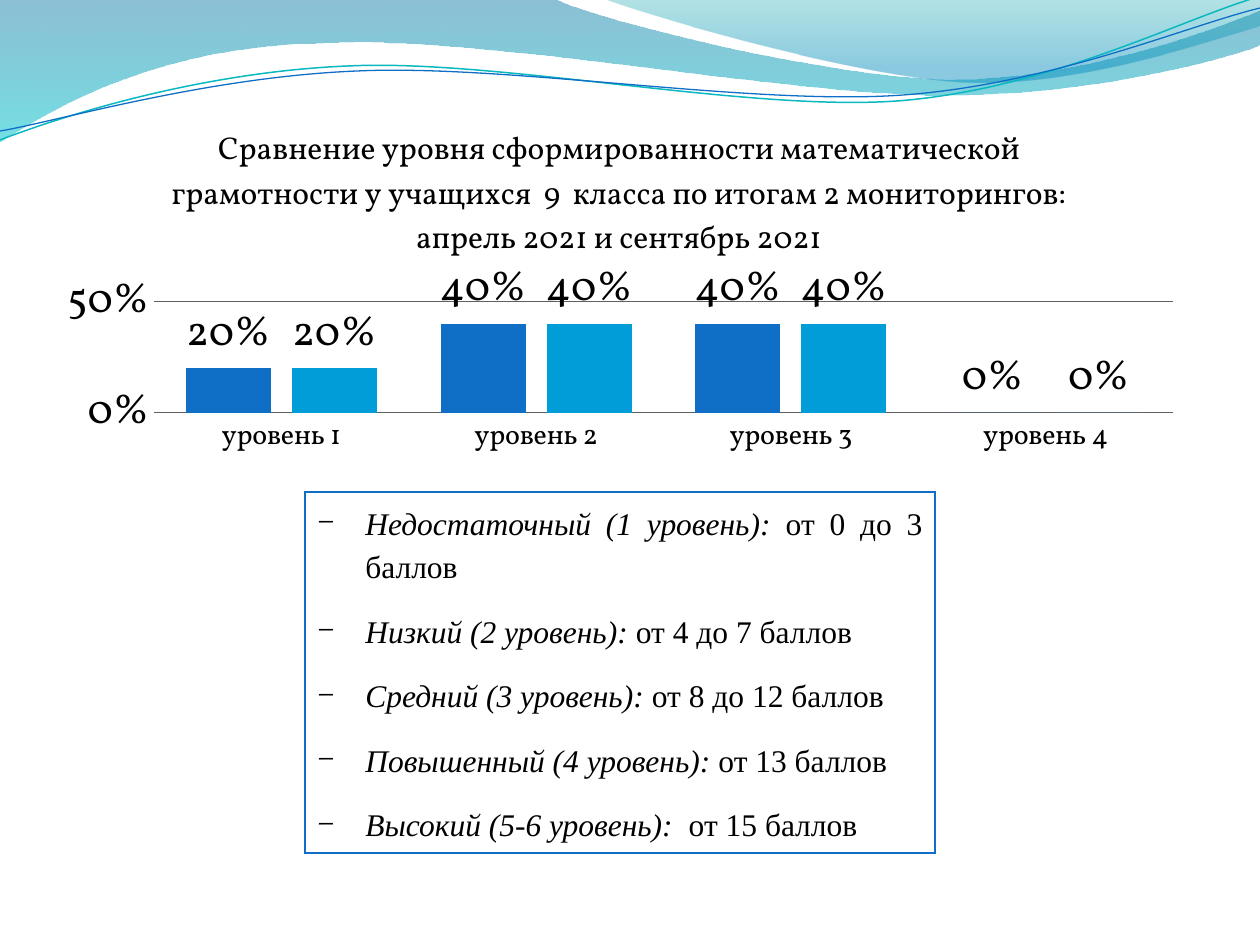
"""Build a slide comparing mathematical literacy levels across two assessments."""
from math import cos, radians, sin

from lxml import etree
from pptx import Presentation
from pptx.chart.data import CategoryChartData
from pptx.dml.color import RGBColor
from pptx.enum.chart import XL_CHART_TYPE, XL_LABEL_POSITION, XL_TICK_MARK
from pptx.enum.shapes import MSO_SHAPE
from pptx.enum.text import MSO_ANCHOR, MSO_AUTO_SIZE, PP_ALIGN
from pptx.oxml import parse_xml
from pptx.oxml.ns import nsdecls, qn
from pptx.util import Emu, Pt

COLUMNS = XL_CHART_TYPE.COLUMN_CLUSTERED
OUTSIDE_END = XL_LABEL_POSITION.OUTSIDE_END
NO_TICK = XL_TICK_MARK.NONE
RECTANGLE = MSO_SHAPE.RECTANGLE
TOP = MSO_ANCHOR.TOP
GROW = MSO_AUTO_SIZE.SHAPE_TO_FIT_TEXT
JUSTIFY = PP_ALIGN.JUSTIFY

BLACK = RGBColor(0x00, 0x00, 0x00)
GRAY = RGBColor(0x60, 0x60, 0x60)
BLUE = RGBColor(0x0F, 0x6F, 0xC6)
SKY = RGBColor(0x00, 0x9D, 0xD9)
TEAL = RGBColor(0x0A, 0xB8, 0xBF)
DEEP_BLUE = RGBColor(0x00, 0x74, 0xA1)
TURQUOISE = RGBColor(0x00, 0xC6, 0xCF)
SEA = RGBColor(0x00, 0xA1, 0xA9)
AZURE = RGBColor(0x00, 0x8B, 0xBF)

PX = 9144000 / 1260
CHART_BOX = (44, 106, 1150, 357)
PLOT_BOX = (154, 302, 1019, 111)
LEGEND_BOX = (305, 492, 630, 361)
HANGING = 48
WAVE_TILT = -2.7
WAVE_CENTER = (629, 73)

TITLE = ("Сравнение уровня сформированности математической грамотности "
         "у учащихся  9  класса по итогам 2 мониторингов: "
         "апрель 2021 и сентябрь 2021")
CATEGORIES = ["уровень 1", "уровень 2", "уровень 3", "уровень 4"]
SERIES = [("Series 1", (0.2, 0.4, 0.4, 0), BLUE),
          ("Series 2", (0.2, 0.4, 0.4, 0), SKY)]
LEVELS = [("Недостаточный (1 уровень):", " от 0 до 3 баллов"),
          ("Низкий (2 уровень):", " от 4 до 7 баллов"),
          ("Средний (3 уровень):", " от 8 до 12 баллов"),
          ("Повышенный (4 уровень):", " от 13 баллов"),
          ("Высокий (5-6 уровень):  ", "от 15 баллов")]
BANDS = [
    ([(0, 0), (554, -1), (600, 21, 837, 79, 955, 79),
      (1074, 79, 1207, 33, 1260, 11), (1261, 45),
      (1239, 55, 1096, 96, 940, 95), (784, 95, 481, 35, 324, 43),
      (163, 45, 58, 105, -1, 142), (0, 0)],
     [(0, DEEP_BLUE, 45), (1, TURQUOISE, 55)]),
    ([(604, -1), (641, 14, 859, 78, 969, 82),
      (1079, 86, 1211, 40, 1260, 26), (1260, 0), (604, -1)],
     [(0, SEA, 30), (0.8, AZURE, 45)]),
]
WAVES = [
    ([(0, 140), (60, 117, 199, 72, 349, 66), (498, 59, 747, 112, 898, 101),
      (1050, 89, 1182, 19, 1258, -3)], TEAL, 0.85),
    ([(0, 131), (59, 121, 207, 77, 357, 71), (508, 64, 752, 106, 903, 95),
      (1053, 84, 1186, 26, 1260, 8)], BLUE, 0.75),
]


def px(n):
    return Emu(round(n * PX))


def set_attrs(target, values):
    for name, value in values.items():
        setattr(target, name, value)


def set_line(line, color, width):
    line.color.rgb = color
    line.width = Pt(width)


def turn(x, y, degrees):
    a = radians(degrees)
    cx, cy = WAVE_CENTER
    dx, dy = x - cx, y - cy
    return cx + dx * cos(a) - dy * sin(a), cy + dx * sin(a) + dy * cos(a)


def add_outline(s, segments, close, tilt=0):
    """Draw points and cubic curves as one freeform."""
    curves = [[tuple(map(px, turn(x, y, -tilt)))
               for x, y in zip(seg[::2], seg[1::2])] for seg in segments]
    ends = [c[-1] for c in curves]
    builder = s.shapes.build_freeform(*ends[0], scale=1.0)
    builder.add_line_segments(ends[1:], close=close)
    sp = builder.convert_to_shape()
    sp.shadow.inherit = False
    for node, points in zip(list(sp.element.iter(qn("a:lnTo"))), curves[1:]):
        if len(points) == 1:
            continue
        node.tag = qn("a:cubicBezTo")
        for i, (x, y) in enumerate(points[:-1]):
            pt = etree.Element(qn("a:pt"), x=str(x - sp.left), y=str(y - sp.top))
            node.insert(i, pt)
    sp.rotation = tilt
    return sp


def add_waves(s):
    for segments, stops in BANDS:
        sp = add_outline(s, segments, True)
        sp.line.fill.background()
        sp.fill.gradient()
        sp.fill.gradient_angle = 270
        for stop, (position, color, _) in zip(sp.fill.gradient_stops, stops):
            stop.position = position
            stop.color.rgb = color
        for node, (_, _, alpha) in zip(sp.element.iter(qn("a:srgbClr")), stops):
            etree.SubElement(node, qn("a:alpha"), val=str(alpha * 1000))
    for segments, color, width in WAVES:
        sp = add_outline(s, segments, False, WAVE_TILT)
        sp.fill.background()
        set_line(sp.line, color, width)


def set_plot_area(chart):
    left, top, width, height = CHART_BOX
    x, y, w, h = PLOT_BOX
    parts = {"x": (x - left) / width, "y": (y - top) / height,
             "w": w / width, "h": h / height}
    modes = "".join(f'<c:{n}Mode val="edge"/>' for n in "xy")
    values = "".join(f'<c:{n} val="{v:.4f}"/>' for n, v in parts.items())
    area = chart.element.find(".//" + qn("c:plotArea"))
    for old in area.findall(qn("c:layout")):
        area.remove(old)
    area.insert(0, parse_xml(
        f'<c:layout {nsdecls("c")}><c:manualLayout>'
        f'<c:layoutTarget val="inner"/>{modes}{values}'
        '</c:manualLayout></c:layout>'))


def add_level_chart(s):
    data = CategoryChartData(number_format="0%")
    data.categories = CATEGORIES
    for name, values, _ in SERIES:
        data.add_series(name, values)
    chart = s.shapes.add_chart(COLUMNS, *map(px, CHART_BOX), data).chart
    chart.has_legend = False
    set_attrs(chart.font, {"name": "Vollkorn", "size": Pt(10)})
    chart.font.color.rgb = BLACK
    r = chart.chart_title.text_frame.paragraphs[0].add_run()
    r.text = TITLE
    set_attrs(r.font, {"name": "Vollkorn", "size": Pt(18), "bold": False})
    r.font.color.rgb = BLACK
    chart.chart_title.include_in_layout = False

    cat, val = chart.category_axis, chart.value_axis
    for axis, size in ((cat, 16), (val, 24)):
        set_attrs(axis, {"major_tick_mark": NO_TICK, "minor_tick_mark": NO_TICK})
        axis.tick_labels.font.size = Pt(size)
    set_attrs(val, {"minimum_scale": 0, "maximum_scale": 0.5,
                    "major_unit": 0.5, "has_major_gridlines": True})
    set_attrs(val.tick_labels, {"number_format": "0%",
                                "number_format_is_linked": False})
    val.format.line.fill.background()
    for line in (cat.format.line, val.major_gridlines.format.line):
        line.color.rgb = GRAY

    plot = chart.plots[0]
    set_attrs(plot, {"gap_width": 75, "overlap": -25, "vary_by_categories": False})
    for series, (_, _, color) in zip(plot.series, SERIES):
        series.format.fill.solid()
        series.format.fill.fore_color.rgb = color
        labels = series.data_labels
        set_attrs(labels, {"show_value": True, "position": OUTSIDE_END,
                           "number_format": "0%", "number_format_is_linked": False})
        labels.font.size = Pt(24)
    set_plot_area(chart)


def add_level_list(s):
    sp = s.shapes.add_shape(RECTANGLE, *map(px, LEGEND_BOX))
    sp.shadow.inherit = False
    sp.fill.background()
    set_line(sp.line, BLUE, 0.75)
    etree.SubElement(sp.element.find(".//" + qn("a:ln")), qn("a:miter"), lim="800000")
    tf = sp.text_frame
    set_attrs(tf, {"word_wrap": True, "auto_size": GROW, "vertical_anchor": TOP})
    for i, texts in enumerate(LEVELS):
        p = tf.add_paragraph() if i else tf.paragraphs[0]
        set_attrs(p, {"alignment": JUSTIFY, "line_spacing": 1.15,
                      "space_before": Pt(6), "space_after": Pt(6)})
        ppr = p._p.get_or_add_pPr()
        ppr.set("marL", str(px(HANGING)))
        ppr.set("indent", str(-px(HANGING)))
        etree.SubElement(ppr, qn("a:buFont"), typeface="Vollkorn")
        etree.SubElement(ppr, qn("a:buChar"), char="−")
        for text, italic in zip(texts, (True, False)):
            r = p.add_run()
            r.text = text
            set_attrs(r.font, {"name": "Times New Roman", "size": Pt(18),
                               "italic": italic})
            r.font.color.rgb = BLACK


prs = Presentation()
set_attrs(prs, {"slide_width": px(1260), "slide_height": px(945)})
s = prs.slides.add_slide(prs.slide_layouts[6])
add_waves(s)
add_level_chart(s)
add_level_list(s)
prs.save("out.pptx")
